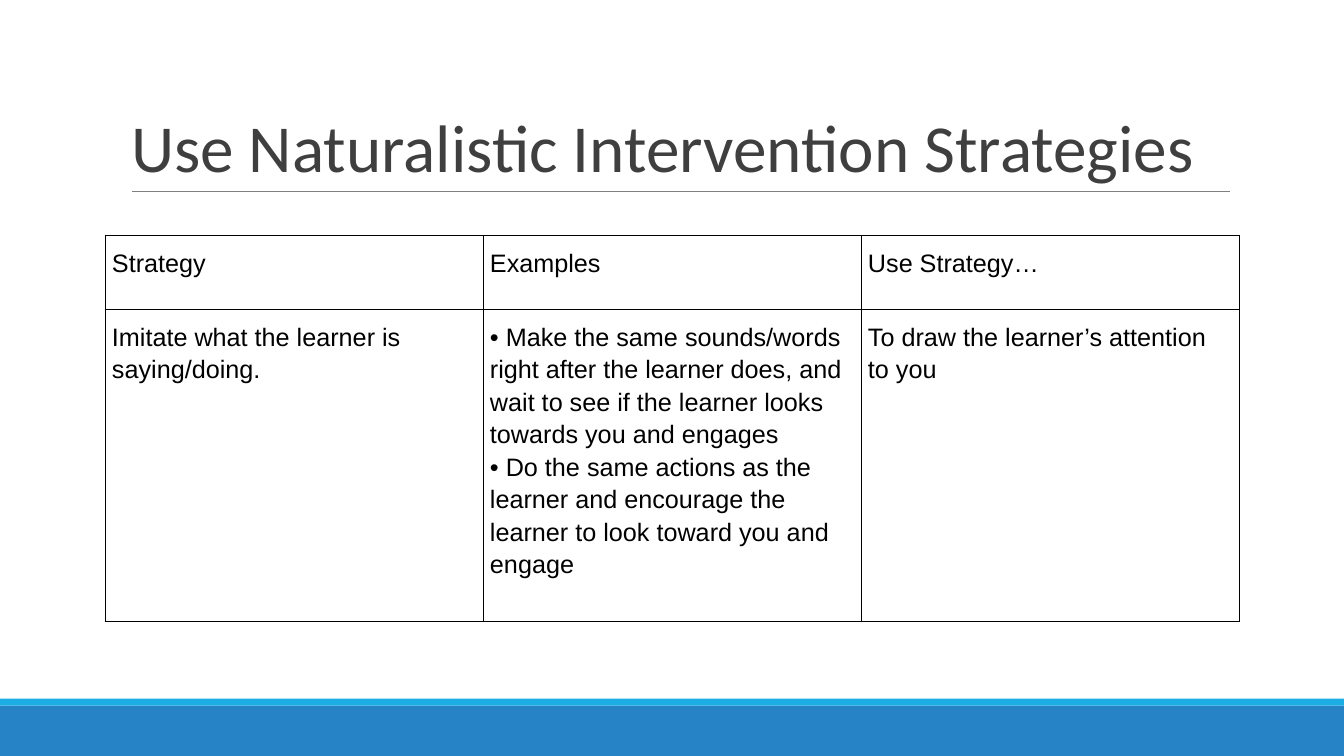
from lxml import etree
from pptx import Presentation
from pptx.dml.color import RGBColor
from pptx.enum import shapes, text
from pptx.oxml import ns
from pptx.util import Pt

BLUE = RGBColor(0x26, 0x83, 0xC6)
CYAN = RGBColor(0x1C, 0xAD, 0xE4)
GRAY = RGBColor(0x7F, 0x7F, 0x7F)
CHARCOAL = RGBColor(0x3F, 0x3F, 0x3F)
BLACK = RGBColor(0, 0, 0)

SLIDE_WIDTH, SLIDE_HEIGHT = 960, 540
ROW_HEIGHTS = [53, 223]
STRATEGIES = [
    ["Strategy", "Examples", "Use Strategy…"],
    [
        "Imitate what the learner is saying/doing.",
        "• Make the same sounds/words right after the learner does, "
        "and wait to see if the learner looks towards you and engages\n"
        "• Do the same actions as the learner and encourage the learner "
        "to look toward you and engage",
        "To draw the learner’s attention to you",
    ],
]


def write_text(frame, content, *, font, size, color, line_spacing):
    frame.text = content
    frame.word_wrap = True
    for paragraph in frame.paragraphs:
        paragraph.alignment = text.PP_ALIGN.LEFT
        paragraph.line_spacing = line_spacing
        paragraph.font.name = font
        paragraph.font.size = Pt(size)
        paragraph.font.color.rgb = color


def add_bar(slide, left, top, width, height, color):
    bar = slide.shapes.add_shape(
        shapes.MSO_SHAPE.RECTANGLE, Pt(left), Pt(top), Pt(width), Pt(height))
    bar.shadow.inherit = False
    bar.fill.solid()
    bar.fill.fore_color.rgb = color
    bar.line.fill.background()


def add_footer(slide, left, top, width, height):
    stripe_height = 5
    add_bar(slide, left, top + stripe_height, width, height - stripe_height, BLUE)
    add_bar(slide, left, top, width, stripe_height, CYAN)


def add_title(slide, left, top, width, height):
    title = slide.shapes.title
    title.left, title.top = Pt(left), Pt(top)
    title.width, title.height = Pt(width), Pt(height)
    frame = title.text_frame
    write_text(frame, "Use Naturalistic Intervention Strategies",
               font="Calibri", size=48, color=CHARCOAL, line_spacing=0.85)
    frame.auto_size = text.MSO_AUTO_SIZE.NONE
    frame.vertical_anchor = text.MSO_ANCHOR.BOTTOM

    # Rule along the bottom of the title
    bottom = Pt(top + height)
    rule = slide.shapes.add_connector(
        shapes.MSO_CONNECTOR.STRAIGHT, Pt(left + 8), bottom, Pt(left + width), bottom)
    rule.line.color.rgb = GRAY
    rule.line.width = Pt(0.75)
    etree.SubElement(rule._element.spPr, ns.qn("a:effectLst"))


def set_borders(cell, color, width):
    properties = cell._tc.get_or_add_tcPr()
    for index, side in enumerate(("lnL", "lnR", "lnT", "lnB")):
        border = etree.Element(ns.qn(f"a:{side}"), w=str(Pt(width)))
        fill = etree.SubElement(border, ns.qn("a:solidFill"))
        etree.SubElement(fill, ns.qn("a:srgbClr"), val=str(color))
        properties.insert(index, border)


def add_strategy_table(slide, left, top, width):
    table = slide.shapes.add_table(
        len(STRATEGIES), len(STRATEGIES[0]),
        Pt(left), Pt(top), Pt(width), Pt(sum(ROW_HEIGHTS))).table
    table.first_row = False
    table.horz_banding = False
    for column in table.columns:
        column.width = Pt(width / len(table.columns))
    for row, height, contents in zip(table.rows, ROW_HEIGHTS, STRATEGIES):
        row.height = Pt(height)
        for cell, content in zip(row.cells, contents):
            cell.margin_left = cell.margin_right = Pt(5)
            cell.margin_top = cell.margin_bottom = Pt(7.2)
            cell.fill.background()
            set_borders(cell, BLACK, 0.75)
            write_text(cell.text_frame, content,
                       font="Arial", size=18, color=BLACK, line_spacing=1.15)


def main():
    presentation = Presentation()
    presentation.slide_width = Pt(SLIDE_WIDTH)
    presentation.slide_height = Pt(SLIDE_HEIGHT)
    title_only = presentation.slide_layouts[5]
    slide = presentation.slides.add_slide(title_only)

    add_footer(slide, 0, 499, SLIDE_WIDTH, 41)
    add_title(slide, 86.4, 22.6, 792, 114)
    add_strategy_table(slide, 75, 168, 810)

    presentation.save("out.pptx")


if __name__ == "__main__":
    main()
